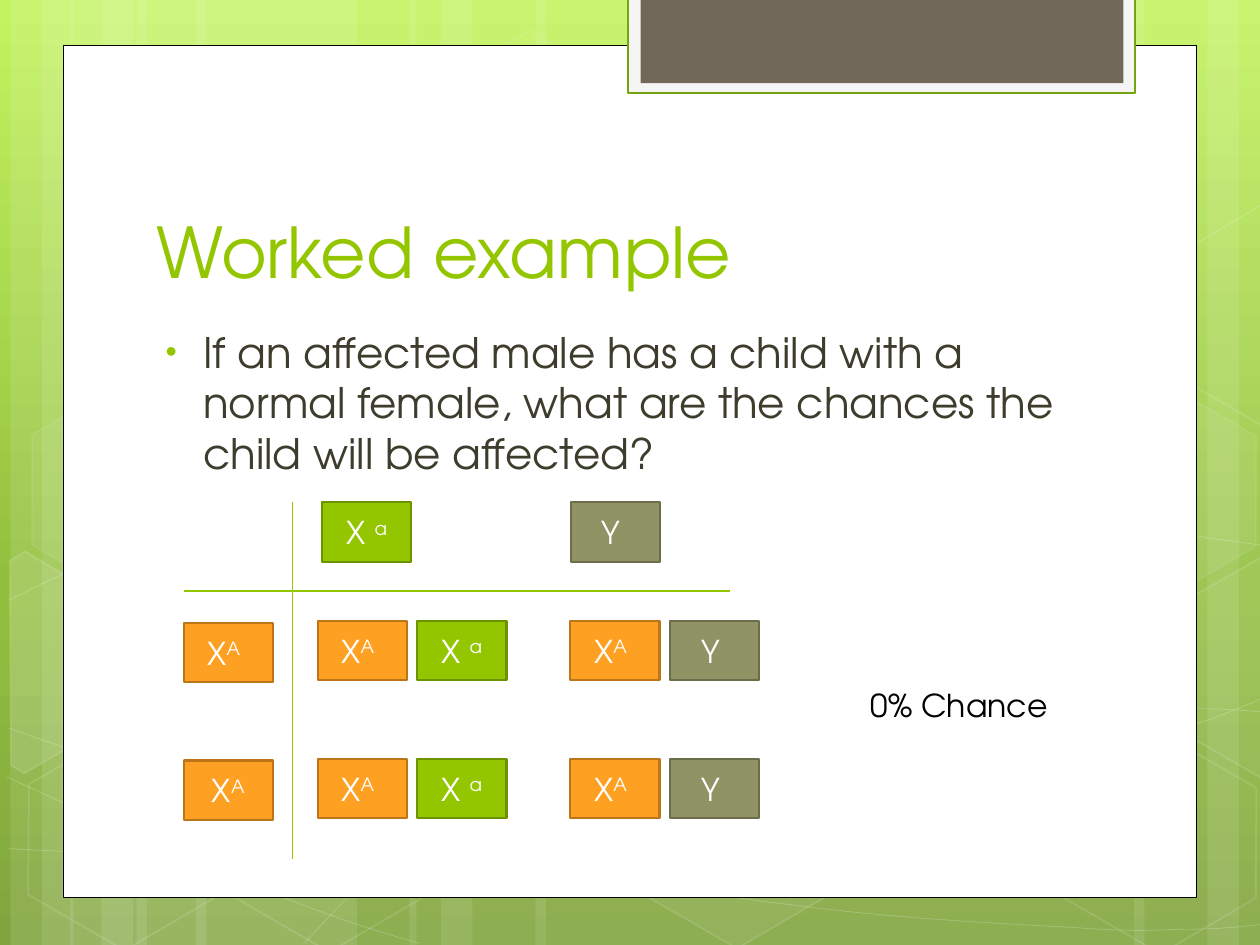
from collections import namedtuple
from copy import deepcopy
from math import cos, radians, sin

from lxml.etree import SubElement
from pptx import Presentation
from pptx.dml.color import RGBColor
from pptx.enum.shapes import MSO_CONNECTOR as Connector, MSO_SHAPE as Preset
from pptx.enum.text import MSO_ANCHOR as Anchor, MSO_AUTO_SIZE as AutoSize, PP_ALIGN as Align
from pptx.oxml.ns import qn
from pptx.util import Pt

Box = namedtuple("Box", "left top width height")
FONT = "TeX Gyre Adventor"
GREEN, WHITE = "94C600", "FFFFFF"

# Alleles: text, superscript, text after it, fill, outline
AFFECTED = ("X ", "a", "", GREEN, "6D9200")
NORMAL = ("X", "A", " ", "FEA022", "BC7619")
MALE = ("Y ", "", "", "909465", "6B6D4B")

# Backdrop parts: stripes (left, width), hexagons (left, top, fill and line opacity)
STRIPES = [(78, 126), (6, 36), (24, 60), (112, 126), (40, 36), (58, 60),
           (528, 126), (690, 36), (648, 60), (306, 222), (234, 36), (252, 60)]
HEXAGONS = [(240, 26, 4, 8), (358, 424, 6, 12), (8, 425, 0, 12),
            (10, 225, 7, 8), (125, 426, 0, 12), (542, 326, 10, 12),
            (600, 427, 0, 12), (600, 226, 7, 8)]
# Hexagons cut by the page edge: fill opacity, centre, corners as they lie on the page
CUT_HEXAGONS = [
    (10, (26, 385), [(6, 320), (14, 315), (69, 347), (68, 410), (14, 442), (6, 437)]),
    (4, (709, 374), [(667, 349), (721, 318), (726, 321), (726, 441), (721, 444), (667, 413)]),
    (0, (709, 173), [(667, 149), (721, 117), (727, 121), (726, 241), (721, 244), (667, 212)]),
]
# Bezier chains: a start, then two control points and an end per piece
CURVES = [
    [(5, 485), (44, 487), (83, 489), (137, 488), (191, 487), (258, 486), (330, 479),
     (402, 472), (504, 458), (570, 444), (636, 431), (703, 409), (725, 397)],
    [(5, 343), (26, 333), (47, 321), (87, 310), (128, 300), (186, 284), (250, 279),
     (314, 274), (392, 273), (471, 279), (550, 284), (682, 307), (725, 312)],
    [(4, 444), (91, 484), (178, 523), (240, 539)],
    [(5, 416), (27, 424), (50, 432), (92, 443), (134, 454), (197, 472), (257, 485),
     (317, 497), (392, 510), (452, 517), (512, 525), (576, 528), (614, 530),
     (652, 533), (662, 531), (680, 531), (699, 531), (712, 529), (725, 528)],
    [(174, 539), (187, 525), (200, 510), (217, 497), (235, 485), (259, 470), (279, 460),
     (300, 450), (312, 446), (338, 438), (364, 431), (413, 421), (438, 416),
     (464, 411), (467, 411), (490, 410), (512, 407), (547, 405), (572, 405),
     (597, 404), (638, 405), (638, 405), (654, 405), (670, 405), (686, 405),
     (699, 405), (711, 406), (724, 407)],
]


def color(value):
    return RGBColor.from_string(value)


def apply(target, **values):
    for name, value in values.items():
        setattr(target, name, value)


def place(shape, box):
    apply(shape, **{name: Pt(value) for name, value in box._asdict().items()})


def paint(shape, fill=None, line=None, width=1.0, fill_alpha=100, line_alpha=100):
    shape.shadow.inherit = False
    for part, value in ((shape.fill, fill), (shape.line.fill, line)):
        if value:
            part.solid()
            part.fore_color.rgb = color(value)
        else:
            part.background()
    if line:
        shape.line.width = Pt(width)
    properties = shape.element.spPr
    for where, alpha in (("a:solidFill", fill_alpha), ("a:ln/a:solidFill", line_alpha)):
        found = properties.find("/".join(qn(tag) for tag in where.split("/")))
        if found is not None and alpha < 100:
            SubElement(found[0], qn("a:alpha"), val=str(alpha * 1000))


def add_preset(page, preset, box, **look):
    shape = page.shapes.add_shape(preset, *map(Pt, box))
    paint(shape, **look)
    return shape


def add_outline(page, points, close, **look):
    builder = page.shapes.build_freeform(*points[0], scale=Pt(1))
    builder.add_line_segments(points[1:], close=close)
    shape = builder.convert_to_shape()
    paint(shape, **look)
    return shape


def bend(shape):
    """Turn each three straight segments into one cubic Bezier piece."""
    outline = shape.element.find(".//" + qn("a:pathLst"))[0]
    segments = outline.findall(qn("a:lnTo"))
    for start in range(0, len(segments), 3):
        curve = SubElement(outline, qn("a:cubicBezTo"))
        for segment in segments[start:start + 3]:
            curve.append(segment[0])
            outline.remove(segment)


def turn(point, centre, degrees):
    angle = radians(degrees)
    x, y = point[0] - centre[0], point[1] - centre[1]
    return (centre[0] + x * cos(angle) - y * sin(angle),
            centre[1] + x * sin(angle) + y * cos(angle))


def add_span(para, text, size, value):
    span = para.add_run()
    span.text = text
    apply(span.font, name=FONT, size=Pt(size), bold=False)
    span.font.color.rgb = color(value)
    return span


def draw_backdrop(page, box):
    # Gradient from top to bottom
    fill = page.background.fill
    fill.gradient()
    fill.gradient_angle = 270
    stops = page.element.find(".//" + qn("a:gsLst"))
    stops.insert(1, deepcopy(stops[0]))
    for stop, (position, value) in zip(
            fill.gradient_stops, ((0, "C3F35F"), (0.62, "93BF3F"), (1, "81A53E"))):
        stop.position = position
        stop.color.rgb = color(value)
    # Stripes, waves and hexagons
    for left, width in STRIPES:
        add_preset(page, Preset.RECTANGLE, Box(box.left + left, box.top, width, box.height),
                   fill=WHITE, fill_alpha=10)
    move = lambda points: [(box.left + x, box.top + y) for x, y in points]
    for chain in CURVES:
        bend(add_outline(page, move(chain), False, line=WHITE, width=0.5, line_alpha=20))
    for left, top, inner, edge in HEXAGONS:
        hexagon = add_preset(page, Preset.HEXAGON,
                             Box(box.left + left, box.top + top, 126, 109.5),
                             fill=WHITE if inner else None, line=WHITE,
                             fill_alpha=inner, line_alpha=edge)
        hexagon.rotation = 30
        hexagon.adjustments[0] = 0.285
    for inner, centre, corners in CUT_HEXAGONS:
        upright = [turn(corner, centre, -30) for corner in corners]
        hexagon = add_outline(page, move(upright), True, fill=WHITE if inner else None,
                              line=WHITE, fill_alpha=inner, line_alpha=12)
        hexagon.rotation = 30


def draw_panel(page, box):
    add_preset(page, Preset.RECTANGLE, box, fill=WHITE, line="000000", width=0.5)
    # Tab hanging from the top edge
    tab = Box(box.left + 323, box.top - 27.5, 289.7, 54.7)
    add_preset(page, Preset.RECTANGLE, tab, fill="F5F5F5", line="74A510", width=1.25)
    add_preset(page, Preset.RECTANGLE, Box(tab.left + 7, tab.top, 276, 49), fill="71685A")


def fill_placeholder(page, shape, box, text, size, value, anchor):
    page.shapes.element.append(shape.element)  # bring to front
    place(shape, box)
    apply(shape.text_frame, auto_size=AutoSize.NONE, word_wrap=True, vertical_anchor=anchor)
    para = shape.text_frame.paragraphs[0]
    para.alignment = Align.LEFT
    add_span(para, text, size, value)
    return para


def write_question(page, box):
    fill_placeholder(page, page.shapes.title, Box(box.left, box.top, box.width, 90),
                     "Worked example", 40, GREEN, Anchor.BOTTOM)
    para = fill_placeholder(
        page, page.placeholders[1], Box(box.left, box.top + 102.3, 533.5, 276.5),
        "If an affected male has a child with a normal female, "
        "what are the chances the child will be affected?", 24, "3E3D2D", Anchor.TOP)
    para.space_before = Pt(4.8)
    # Green bullet with hanging indent
    properties = para._p.get_or_add_pPr()
    properties.set("marL", str(Pt(27)))
    properties.set("indent", str(Pt(-21.6)))
    SubElement(SubElement(properties, qn("a:buClr")), qn("a:srgbClr"), val=GREEN)
    SubElement(properties, qn("a:buSzPct"), val="76000")
    SubElement(properties, qn("a:buFont"), typeface="Arial")
    SubElement(properties, qn("a:buChar"), char="•")


def add_allele(page, left, top, allele):
    text, raised, after, fill, line = allele
    tile = add_preset(page, Preset.RECTANGLE, Box(left, top, 51, 34),
                      fill=fill, line=line, width=1.25)
    apply(tile.text_frame, word_wrap=True, vertical_anchor=Anchor.MIDDLE)
    para = tile.text_frame.paragraphs[0]
    para.alignment = Align.CENTER
    for part, baseline in ((text, 0), (raised, 30000), (after, 0)):
        if part:
            span = add_span(para, part, 18, WHITE)
            span._r.get_or_add_rPr().set("baseline", str(baseline))


def draw_punnett_square(page, box):
    right, bottom = box.left + box.width, box.top + box.height
    across, down = box.top + 50.7, box.left + 62.2
    for ends in ((box.left, across, right, across), (down, box.top, down, bottom)):
        line = page.shapes.add_connector(Connector.STRAIGHT, *map(Pt, ends))
        line.line.color.rgb = color(GREEN)
        line.line.width = Pt(0.75)
        SubElement(line._element.spPr, qn("a:effectLst"))
    # Father's gametes on top: head and cell offsets
    columns = ((AFFECTED, 79.2, 76.6), (MALE, 221.2, 221))
    for father, head, _ in columns:
        add_allele(page, box.left + head, box.top, father)
    # Mother's gametes at the side, then the crosses
    for top, mother in ((67.8, NORMAL), (146.6, ("X", "A", "", *NORMAL[3:]))):
        add_allele(page, box.left, box.top + top + 1, mother)
        for father, _, cell in columns:
            for step, allele in enumerate((NORMAL, father)):
                add_allele(page, box.left + cell + 57 * step, box.top + top, allele)


def write_answer(page, box):
    answer = page.shapes.add_textbox(*map(Pt, box))
    answer.text_frame.word_wrap = True
    add_span(answer.text_frame.paragraphs[0], "0% Chance", 18, "000000")


def main():
    deck = Presentation()
    apply(deck, slide_width=Pt(720), slide_height=Pt(540))
    page = deck.slides.add_slide(deck.slide_layouts[1])
    draw_backdrop(page, Box(0, 0, 720, 540))
    draw_panel(page, Box(36, 26, 648, 487))
    write_question(page, Box(82, 80.6, 553, 379))
    draw_punnett_square(page, Box(104.9, 287, 312, 204))
    write_answer(page, Box(490.5, 388.6, 136, 29))
    deck.save("out.pptx")


if __name__ == "__main__":
    main()
